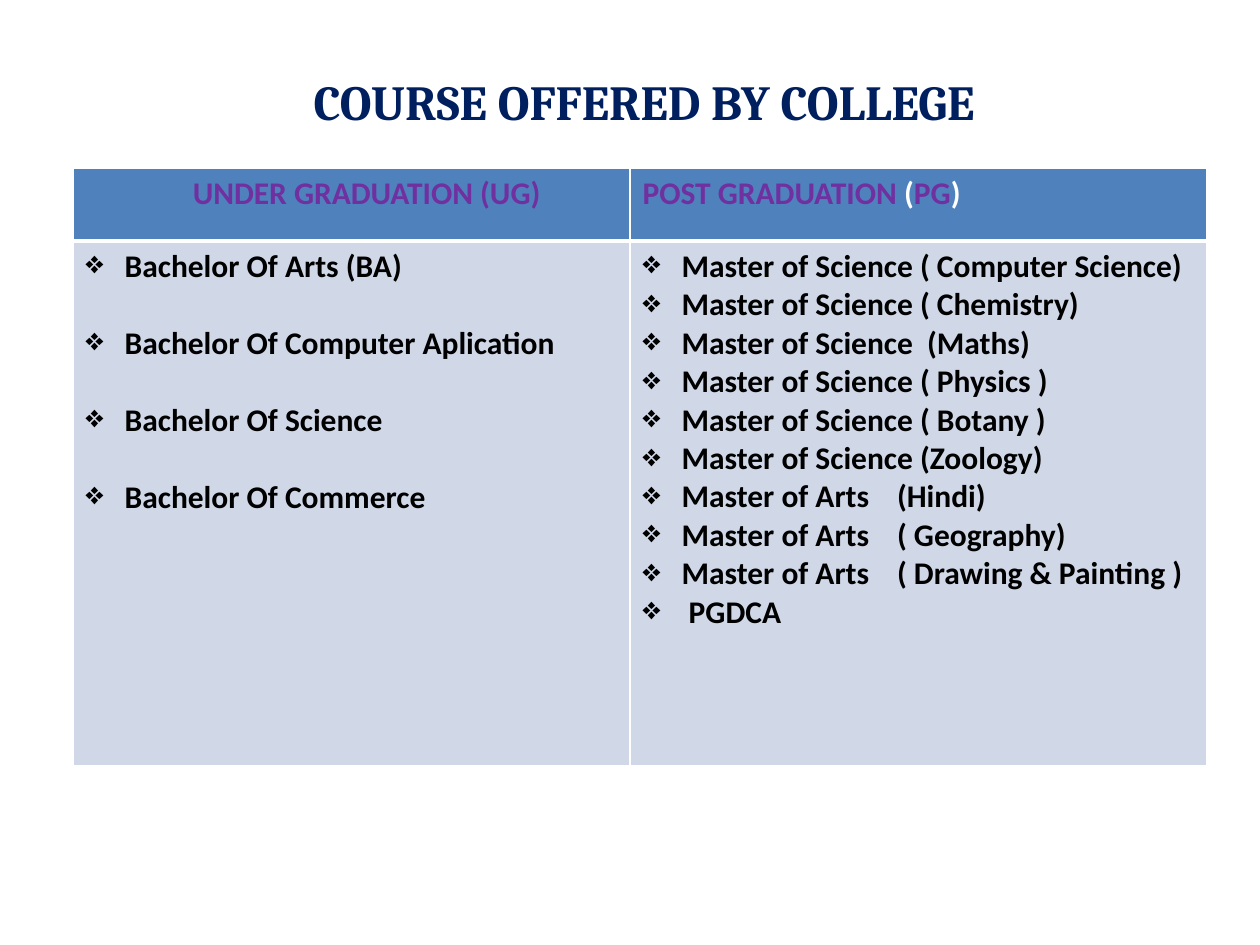
from dataclasses import dataclass

from lxml import etree
from pptx import Presentation
from pptx.dml.color import RGBColor
from pptx.enum import text as t
from pptx.oxml import ns
from pptx.util import Inches, Pt

WIDE, HIGH = 10, 7.5
WHITE, BLACK, NAVY = "FFFFFF", "000000", "001F5F"
PURPLE, BLUE, PALE = "7030A0", "4F81BD", "D0D8E8"


@dataclass
class Course:
    head: list[tuple[str, str]]
    inset: float
    items: list[str]
    gap: float
    share: float


COURSES = [
    Course(
        [("UNDER GRADUATION (UG)", PURPLE)],
        0.85,
        [
            "Bachelor Of Arts (BA)",
            "Bachelor Of Computer Aplication",
            "Bachelor Of Science",
            "Bachelor Of Commerce",
        ],
        22,
        0.442,
    ),
    Course(
        [("POST GRADUATION", PURPLE), (" (", WHITE), ("PG", PURPLE), (")", WHITE)],
        0,
        [
            "Master of Science ( Computer Science)",
            "Master of Science ( Chemistry)",
            "Master of Science  (Maths)",
            "Master of Science ( Physics )",
            "Master of Science ( Botany )",
            "Master of Science (Zoology)",
            "Master of Arts\t(Hindi)",
            "Master of Arts\t( Geography)",
            "Master of Arts\t( Drawing & Painting )",
            " PGDCA",
        ],
        0,
        0.458,
    ),
]


def across(share: float) -> int:
    return Inches(WIDE * share)


def down(share: float) -> int:
    return Inches(HIGH * share)


def tint(code: str) -> RGBColor:
    return RGBColor.from_string(code)


def node(root, tag: str, **attrs: str):
    return etree.SubElement(root, ns.qn(tag), attrs)


def write(para, words: str, *, size=18, face="Calibri", hue=BLACK) -> None:
    run = para.add_run()
    run.text = words
    run.font.size = Pt(size)
    run.font.name = face
    run.font.bold = True
    run.font.color.rgb = tint(hue)


def indent(para, left: float, first: float):
    props = para._p.get_or_add_pPr()
    props.set("marL", str(Inches(left)))
    props.set("indent", str(Inches(first)))
    return props


def bullet(para, stop: float) -> None:
    props = indent(para, 0.31, -0.31)
    node(props, "a:buChar", char="❖")
    tabs = node(props, "a:tabLst")
    node(tabs, "a:tab", pos=str(Inches(stop)), algn="l")


def paint(cell, fill: str, base: float) -> None:
    props = cell._tc.get_or_add_tcPr()
    for side, width in (("L", 1), ("R", 1), ("T", 1), ("B", base)):
        line = node(props, f"a:ln{side}", w=str(Pt(width)))
        node(node(line, "a:solidFill"), "a:srgbClr", val=WHITE)
    cell.fill.solid()
    cell.fill.fore_color.rgb = tint(fill)


def title(slide) -> None:
    box = slide.shapes.add_textbox(
        across(0.066), down(0.076), across(0.868), down(0.063)
    )
    frame = box.text_frame
    frame.word_wrap = True
    frame.vertical_anchor = t.MSO_ANCHOR.TOP
    frame.margin_left = frame.margin_right = 0
    frame.margin_top = frame.margin_bottom = 0
    para = frame.paragraphs[0]
    indent(para, 1.83, 0)
    write(para, "COURSE OFFERED BY COLLEGE", size=28, face="Cambria", hue=NAVY)


def fill(table, col: int, course: Course) -> None:
    table.columns[col].width = across(course.share)
    head, body = table.cell(0, col), table.cell(1, col)
    paint(head, BLUE, 3)
    paint(body, PALE, 1)
    para = head.text_frame.paragraphs[0]
    indent(para, course.inset, 0)
    for words, hue in course.head:
        write(para, words, hue=hue)
    frame = body.text_frame
    for row, item in enumerate(course.items):
        para = frame.add_paragraph() if row else frame.paragraphs[0]
        bullet(para, 2.02)
        if row and course.gap:
            para.space_before = Pt(course.gap)
        write(para, item)


def main() -> None:
    deck = Presentation()
    deck.slide_width, deck.slide_height = Inches(WIDE), Inches(HIGH)
    slide = deck.slides.add_slide(deck.slide_layouts[6])
    title(slide)
    table = slide.shapes.add_table(
        2, len(COURSES), across(0.058), down(0.178), across(0.9), down(0.632)
    ).table
    table.rows[0].height = down(0.077)
    table.rows[1].height = down(0.555)
    for col, course in enumerate(COURSES):
        fill(table, col, course)
    deck.save("out.pptx")


if __name__ == "__main__":
    main()
